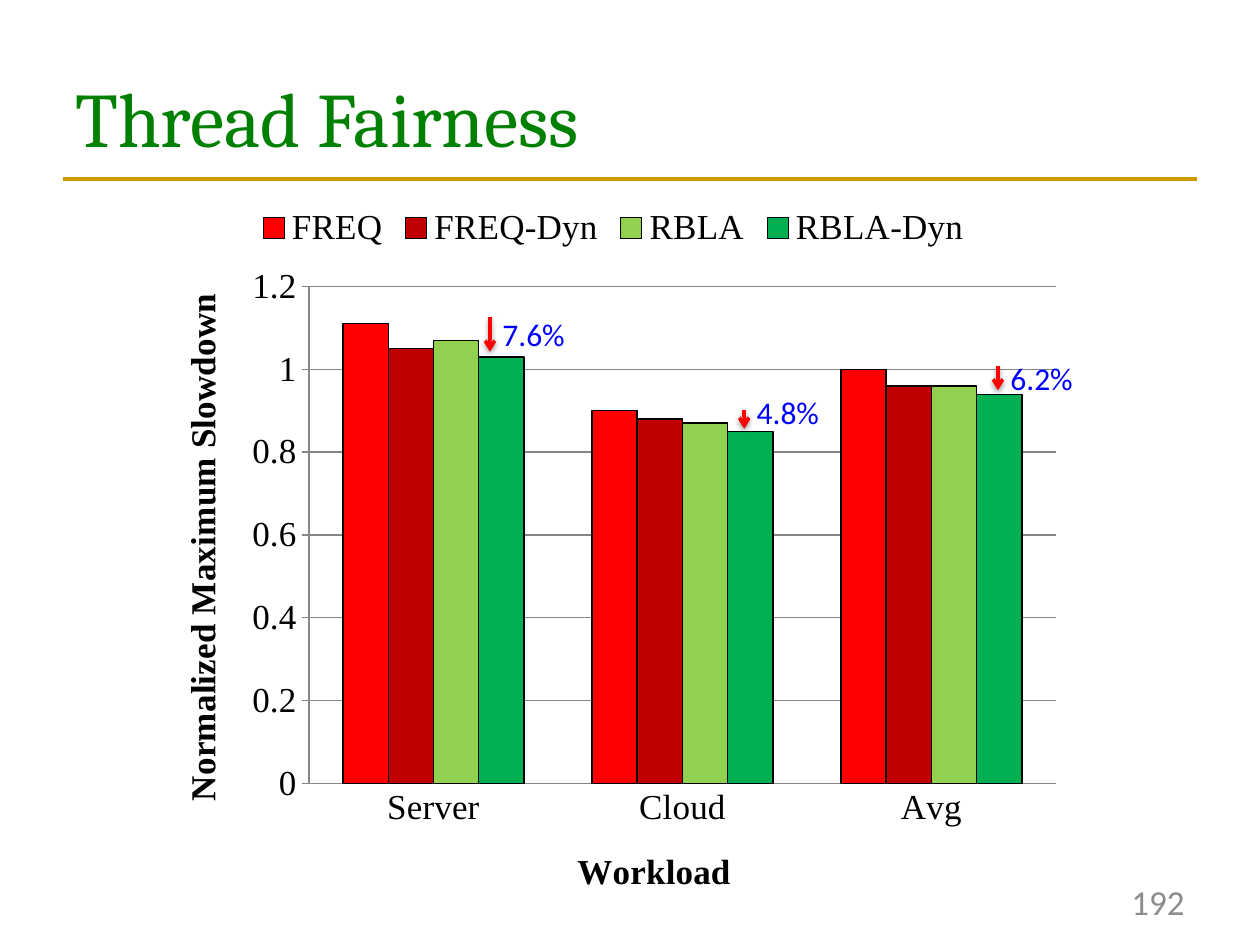
from typing import NamedTuple

from lxml import etree
from pptx import Presentation
from pptx.chart.data import CategoryChartData
from pptx.dml.color import RGBColor
from pptx.enum import chart as ch, shapes, text
from pptx.oxml import parse_xml
from pptx.oxml import ns
from pptx.util import Pt

GRID_GREY = "868686"


class Series(NamedTuple):
    name: str
    values: tuple
    color: str


class Reduction(NamedTuple):
    label: str
    x: float
    arrow_top: float
    arrow_tip: float
    label_top: float


class Label(NamedTuple):
    words: str
    box: tuple
    size: float
    font: str
    color: str
    align: text.PP_ALIGN = text.PP_ALIGN.LEFT
    anchor: text.MSO_ANCHOR = text.MSO_ANCHOR.MIDDLE
    wrap: bool = True


CATEGORIES = ("Server", "Cloud", "Avg")
SERIES = (
    Series("FREQ", (1.11, 0.9, 1), "FF0000"),
    Series("FREQ-Dyn", (1.05, 0.88, 0.96), "C00000"),
    Series("RBLA", (1.07, 0.87, 0.96), "92D050"),
    Series("RBLA-Dyn", (1.03, 0.85, 0.94), "00B050"),
)
REDUCTIONS = (
    Reduction("7.6%", 280, 181, 201, 176.5),
    Reduction("4.8%", 425.3, 234, 245, 221),
    Reduction("6.2%", 570.3, 209, 223, 201.5),
)
# Inner plot area as fractions of the chart frame
PLOT_AREA = {"x": 0.17, "y": 0.13, "w": 0.81, "h": 0.68}


def rgb(hex_color: str) -> RGBColor:
    return RGBColor.from_string(hex_color)


def apply(target, formats: dict) -> None:
    for name, value in formats.items():
        setattr(target, name, value)


def style_line(line, color: str, width: float) -> None:
    line.color.rgb = rgb(color)
    line.width = Pt(width)


def add_label(slide, label: Label) -> None:
    box = slide.shapes.add_textbox(*map(Pt, label.box))
    frame = box.text_frame
    apply(frame, {"word_wrap": label.wrap, "vertical_anchor": label.anchor})
    paragraph = frame.paragraphs[0]
    paragraph.alignment = label.align
    run = paragraph.add_run()
    run.text = label.words
    apply(run.font, {"size": Pt(label.size), "name": label.font})
    run.font.color.rgb = rgb(label.color)


def add_line(slide, start: tuple, end: tuple, color: str, width: float):
    line = slide.shapes.add_connector(
        shapes.MSO_CONNECTOR.STRAIGHT, *map(Pt, start + end))
    style_line(line.line, color, width)
    effects = etree.SubElement(line._element.spPr, ns.qn("a:effectLst"))
    return line, effects


def add_reduction(slide, item: Reduction) -> None:
    arrow, effects = add_line(
        slide, (item.x, item.arrow_tip), (item.x, item.arrow_top), "FF0000", 2)
    etree.SubElement(arrow.line._get_or_add_ln(), ns.qn("a:headEnd"), type="arrow")
    effects.append(parse_xml(
        f'<a:outerShdw {ns.nsdecls("a")} blurRad="{Pt(3.1)}" dist="{Pt(1.6)}" '
        'dir="5400000" rotWithShape="0"><a:srgbClr val="000000">'
        '<a:alpha val="38000"/></a:srgbClr></a:outerShdw>'))
    add_label(slide, Label(item.label, (item.x, item.label_top, 55.5, 29), 18,
                           "Calibri", "0000FF", anchor=text.MSO_ANCHOR.TOP,
                           wrap=False))


def title_axis(axis, title: str) -> None:
    frame = axis.axis_title.text_frame
    frame.text = title
    font = frame.paragraphs[0].runs[0].font
    apply(font, {"size": Pt(20), "bold": True, "name": "Times New Roman"})
    style_line(axis.format.line, GRID_GREY, 0.75)


def fix_plot_area(chart) -> None:
    area = chart._chartSpace.chart.plotArea
    for old in area.findall(ns.qn("c:layout")):
        area.remove(old)
    layout = etree.Element(ns.qn("c:layout"))
    manual = etree.SubElement(layout, ns.qn("c:manualLayout"))
    settings = {"layoutTarget": "inner", "xMode": "edge", "yMode": "edge", **PLOT_AREA}
    for name, value in settings.items():
        etree.SubElement(manual, ns.qn(f"c:{name}"), val=str(value))
    area.insert(0, layout)


def add_slowdown_chart(slide) -> None:
    data = CategoryChartData()
    data.categories = CATEGORIES
    for series in SERIES:
        data.add_series(series.name, series.values)
    chart = slide.shapes.add_chart(
        ch.XL_CHART_TYPE.COLUMN_CLUSTERED,
        *map(Pt, (87, 109.5, 527, 417.5)), data).chart
    apply(chart, {"has_title": False, "has_legend": True})
    apply(chart.font, {"size": Pt(20), "name": "Times New Roman"})
    chart.font.color.rgb = rgb("000000")
    apply(chart.legend, {"position": ch.XL_LEGEND_POSITION.TOP,
                         "include_in_layout": False})

    # Columns
    plot = chart.plots[0]
    apply(plot, {"gap_width": 150, "overlap": 0, "vary_by_categories": False})
    for column, series in zip(plot.series, SERIES):
        column.format.fill.solid()
        column.format.fill.fore_color.rgb = rgb(series.color)
        style_line(column.format.line, "000000", 0.75)

    # Axes
    workload, slowdown = chart.category_axis, chart.value_axis
    title_axis(workload, "Workload")
    title_axis(slowdown, "Normalized Maximum Slowdown")
    workload.major_tick_mark = ch.XL_TICK_MARK.NONE
    apply(slowdown, {"minimum_scale": 0, "maximum_scale": 1.2, "major_unit": 0.2,
                     "major_tick_mark": ch.XL_TICK_MARK.OUTSIDE,
                     "has_major_gridlines": True})
    apply(slowdown.tick_labels, {"number_format": "General",
                                 "number_format_is_linked": False})
    style_line(slowdown.major_gridlines.format.line, GRID_GREY, 0.75)
    fix_plot_area(chart)


def main() -> None:
    deck = Presentation()
    apply(deck, {"slide_width": Pt(720), "slide_height": Pt(540)})
    slide = deck.slides.add_slide(deck.slide_layouts[6])

    # Rule, chart, title and page number
    add_line(slide, (36, 102.5), (684, 102.5), "CC9900", 2.25)
    add_slowdown_chart(slide)
    add_label(slide, Label("Thread Fairness", (36, 21.5, 648, 90), 44,
                           "Cambria", "008000"))
    add_label(slide, Label("192", (516, 500.5, 168, 29), 20, "Calibri",
                           "8C8C8C", text.PP_ALIGN.RIGHT))

    # Slowdown reductions
    for reduction in REDUCTIONS:
        add_reduction(slide, reduction)
    deck.save("out.pptx")


if __name__ == "__main__":
    main()
